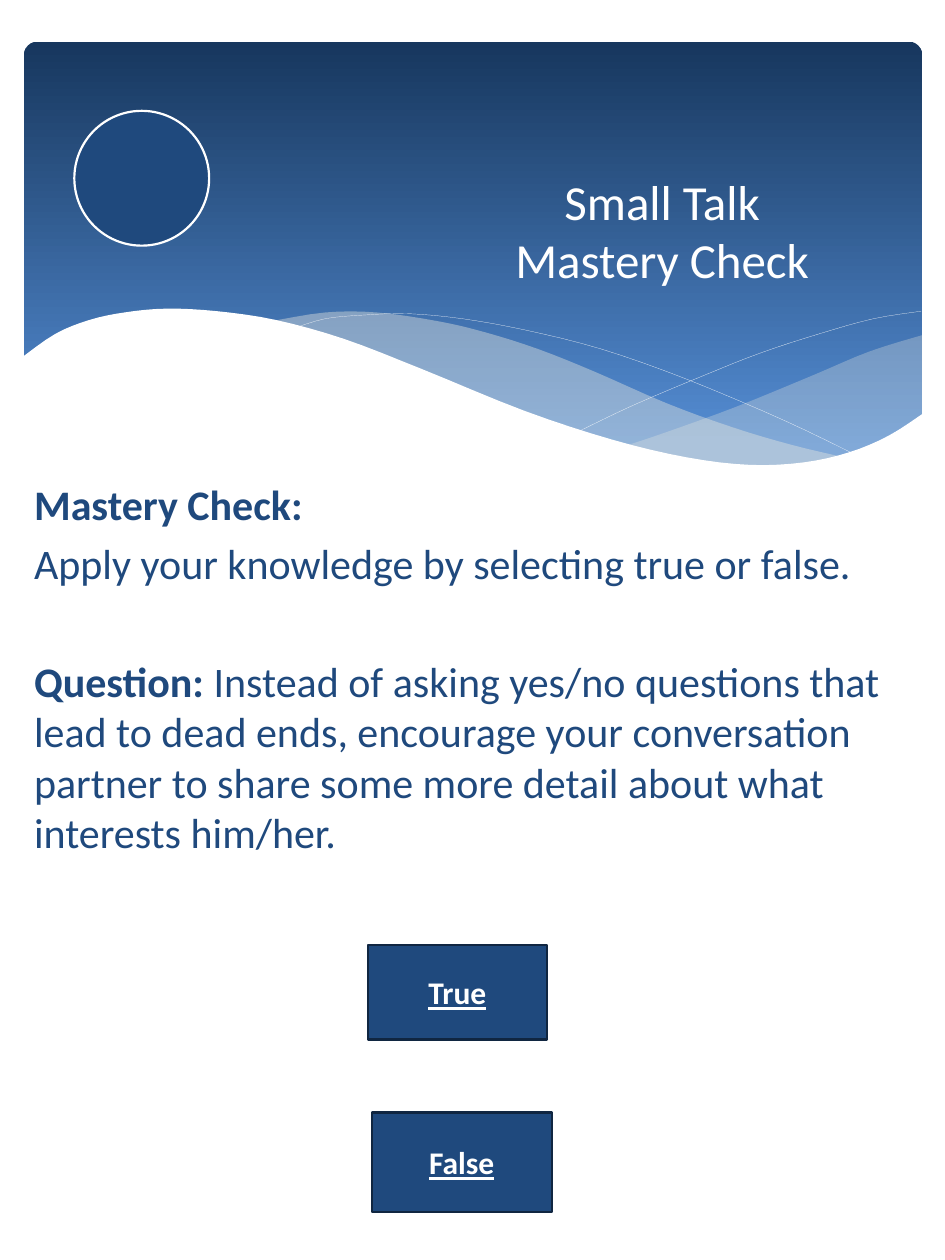
from lxml import etree
from pptx import Presentation
from pptx.dml.color import RGBColor
from pptx.enum.shapes import MSO_SHAPE
from pptx.enum.text import MSO_ANCHOR, MSO_AUTO_SIZE, PP_ALIGN
from pptx.oxml.ns import qn
from pptx.util import Inches, Pt

RECTANGLE, ROUNDED, OVAL = MSO_SHAPE.RECTANGLE, MSO_SHAPE.ROUNDED_RECTANGLE, MSO_SHAPE.OVAL
MIDDLE, TOP = MSO_ANCHOR.MIDDLE, MSO_ANCHOR.TOP
CENTER, LEFT = PP_ALIGN.CENTER, PP_ALIGN.LEFT
FONT, NAVY, WHITE, MIST, EDGE = "Calibri", "1F497D", "FFFFFF", "EEECE1", "102641"

COVER = [(7.16, .83), (6.88, 1.01), (6.57, 1.14), (6.21, 1.22), (5.78, 1.24), (5.28, 1.18),
         (4.69, 1.04), (3.99, .81), (3.18, .48), (2.56, .24), (2.02, .09), (1.55, .02),
         (1.15, 0), (.82, .03), (.54, .09), (.27, .2), (0, .39)]
COVER_BASE = [(0, 1.94), (7.16, 1.94)]
RIGHT_CREST = [(7.15, .21), (6.73, .34), (6.28, .53), (5.67, .78), (5.12, .98), (4.79, 1.09)]
RIGHT_TROUGH = [(4.79, 1.09), (5.22, 1.18), (5.6, 1.24), (6.01, 1.25), (6.37, 1.21),
                (6.74, 1.09), (7.15, .84)]
LEFT_CREST = [(6.53, 1.18), (6.11, 1.08), (5.64, .94), (5.12, .75), (4.55, .5), (4.1, .32),
              (3.69, .19), (3.31, .1), (2.82, .03), (2.41, .03), (1.98, .1)]
LEFT_TROUGH = [(1.98, .1), (2.4, .21), (2.86, .36), (3.2, .5), (3.8, .76), (4.34, .95),
               (4.82, 1.1), (5.25, 1.2), (5.63, 1.25), (6.04, 1.26), (6.53, 1.18)]
FALLING_LINE = [(2.15, .16), (2.41, .08), (2.73, .05), (3.07, .04), (3.5, .08), (4, .17),
                (4.6, .32), (5.28, .56), (6.06, .89), (6.64, 1.17)]
RISING_LINE = [(4.43, .97), (4.87, .76), (5.44, .52), (5.87, .35), (6.33, .2), (6.76, .08),
               (7.14, .02)]


def color(value):
    return RGBColor.from_string(value)


def inches(*values):
    return [Inches(value) for value in values]


def smooth(knots, steps=4):
    padded = [knots[0], *knots, knots[-1]]
    points = [knots[0]]
    for a, b, c, d in zip(padded, padded[1:], padded[2:], padded[3:]):
        for step in range(1, steps + 1):
            t = step / steps
            points.append(tuple(
                (2 * q + (r - p) * t + (2 * p - 5 * q + 4 * r - s) * t ** 2
                 + (3 * q - p - 3 * r + s) * t ** 3) / 2
                for p, q, r, s in zip(a, b, c, d)))
    return points


def paint(shape, fill=None, line=None, width=0.1, opacity=None):
    shape.shadow.inherit = False
    if fill:
        shape.fill.solid()
        shape.fill.fore_color.rgb = color(fill)
    else:
        shape.fill.background()
    if opacity:
        tint = shape.fill._xPr.find(qn("a:solidFill"))[0]
        etree.SubElement(tint, qn("a:alpha"), val=str(opacity * 1000))
    if line:
        shape.line.color.rgb = color(line)
        shape.line.width = Pt(width)
    else:
        shape.line.fill.background()


def add_span(para, text, size, tone, bold=False, underline=False):
    span = para.add_run()
    span.text = text
    font = span.font
    font.name, font.size, font.bold, font.underline = FONT, Pt(size), bold, underline
    font.color.rgb = color(tone)


def set_frame(shape, anchor):
    frame = shape.text_frame
    frame.word_wrap = True
    frame.auto_size = MSO_AUTO_SIZE.NONE
    frame.vertical_anchor = anchor
    return frame


def place(shape, box):
    shape.left, shape.top, shape.width, shape.height = inches(*box)
    tree = shape._element.getparent()
    tree.append(shape._element)


def add_wave(page, box, points, closed=True):
    spots = [inches(box[0] + x, box[1] + y) for x, y in points]
    builder = page.shapes.build_freeform(*spots[0])
    builder.add_line_segments(spots[1:], close=closed)
    return builder.convert_to_shape()


def add_banner(page, box):
    panel = page.shapes.add_shape(ROUNDED, *inches(*box))
    panel.adjustments[0] = 0.03
    paint(panel)
    panel.fill.gradient()
    panel.fill.gradient_angle = 270
    for stop, tone, position in zip(panel.fill.gradient_stops, ("17375E", "558ED5"), (0, 0.9)):
        stop.color.rgb = color(tone)
        stop.position = position


def add_waves(page, box):
    for crest, trough, opacity in ((RIGHT_CREST, RIGHT_TROUGH, 29), (LEFT_CREST, LEFT_TROUGH, 40)):
        wave = add_wave(page, box, smooth(crest) + smooth(trough))
        paint(wave, MIST, opacity=opacity)
    for knots in (FALLING_LINE, RISING_LINE):
        paint(add_wave(page, box, smooth(knots), closed=False), line=WHITE)
    paint(add_wave(page, box, smooth(COVER) + COVER_BASE), WHITE)


def add_title(page, box):
    title = page.shapes.title
    place(title, box)
    para = set_frame(title, MIDDLE).paragraphs[0]
    para.alignment = CENTER
    add_span(para, "Small Talk", 28, WHITE)
    para.add_line_break()
    add_span(para, "Mastery Check", 28, WHITE)


def add_question(page, box):
    body = page.placeholders[1]
    place(body, box)
    frame = set_frame(body, TOP)
    content = [
        (4.8, [("Mastery Check:", True)]),
        (4.8, [("Apply your knowledge by selecting true or false.", False)]),
        (38.5, [("Question: ", True),
                ("Instead of asking yes/no questions that lead to dead ends, encourage your "
                 "conversation partner to share some more detail about what interests him/her.",
                 False)]),
    ]
    for index, (gap, spans) in enumerate(content):
        para = frame.add_paragraph() if index else frame.paragraphs[0]
        para.alignment = LEFT
        para.space_before = Pt(gap)
        properties = para._p.get_or_add_pPr()
        properties.set("marL", "0")
        properties.set("indent", "0")
        etree.SubElement(properties, qn("a:buNone"))
        for text, bold in spans:
            add_span(para, text, 24, NAVY, bold)


def add_button(page, box, label):
    button = page.shapes.add_shape(RECTANGLE, *inches(*box))
    paint(button, NAVY, EDGE, 1.25)
    para = set_frame(button, MIDDLE).paragraphs[0]
    para.alignment = CENTER
    add_span(para, label, 18, WHITE, bold=True, underline=True)


def add_badge(page, box):
    badge = page.shapes.add_shape(OVAL, *inches(*box))
    paint(badge, NAVY, WHITE, 1.25)


def main():
    deck = Presentation()
    deck.slide_width, deck.slide_height = inches(7.5, 10)
    page = deck.slides.add_slide(deck.slide_layouts[1])
    add_banner(page, (0.19, 0.33, 7.13, 3.6))
    add_waves(page, (0.17, 2.45, 7.16, 1.94))
    add_question(page, (0.17, 3.75, 7.33, 5.5))
    add_title(page, (3.17, 1.08, 4.17, 1.49))
    add_button(page, (2.92, 7.5, 1.42, 0.75), "True")
    add_button(page, (2.95, 8.83, 1.43, 0.79), "False")
    add_badge(page, (0.59, 0.88, 1.07, 1.07))
    deck.save("out.pptx")


if __name__ == "__main__":
    main()
